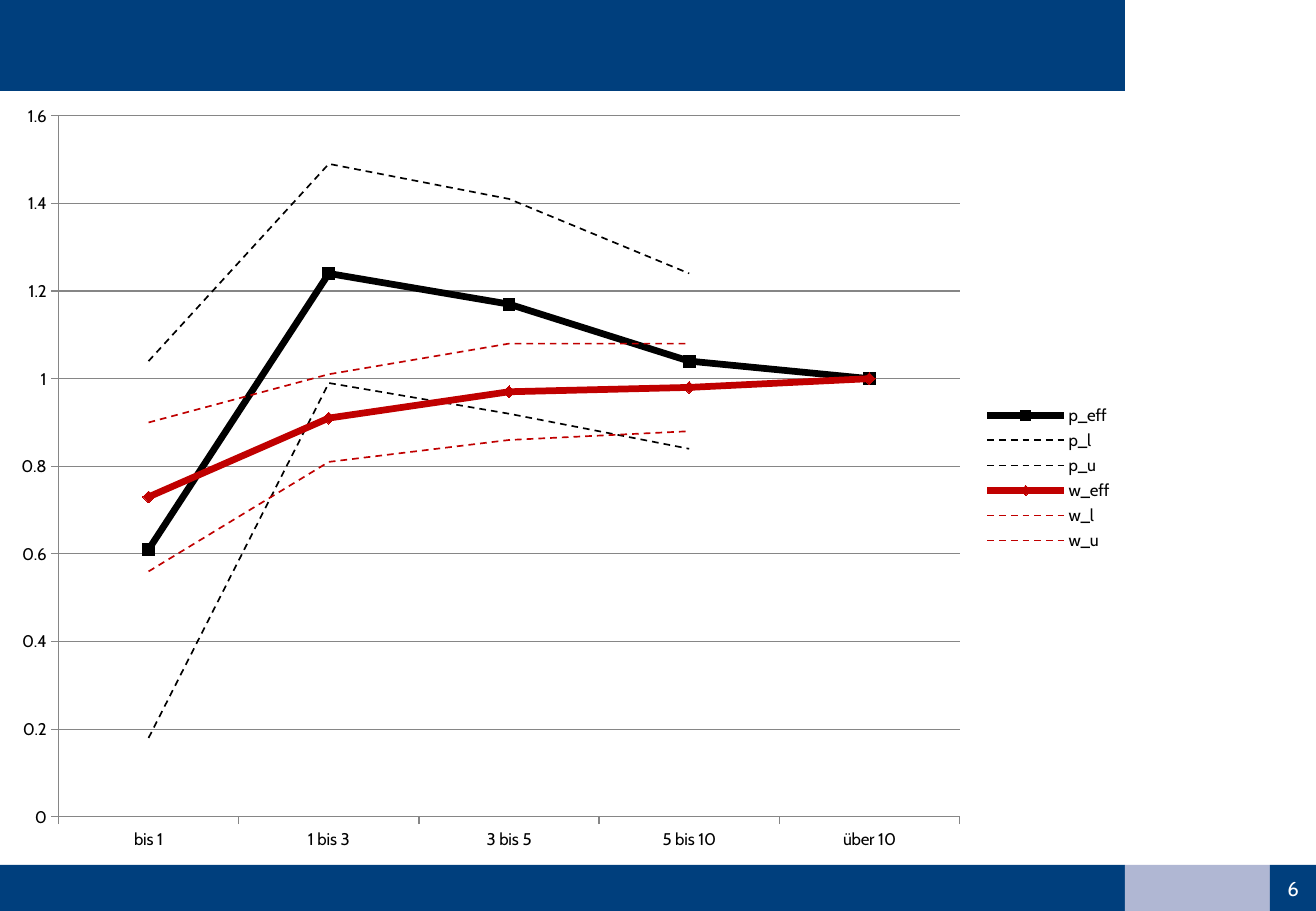
import pptx
import pptx.chart.data
import pptx.dml.color
import pptx.enum.chart
import pptx.enum.dml
import pptx.enum.shapes
import pptx.enum.text
import pptx.oxml
import pptx.oxml.ns
import pptx.util

PX = 7526  # EMU per px
NAVY, LILAC, WHITE = "003F7D", "B0B7D3", "FFFFFF"
BLACK, RED, GRAY = "000000", "C00000", "868686"

CATEGORIES = ["bis 1", "1 bis 3", "3 bis 5", "5 bis 10", "über 10"]
# Name, colour, values; effects are thick, confidence bounds dashed
SERIES = [
    ("p_eff", BLACK, [0.61, 1.24, 1.17, 1.04, 1]),
    ("p_l", BLACK, [0.18, 0.99, 0.92, 0.84, None]),
    ("p_u", BLACK, [1.04, 1.49, 1.41, 1.24, None]),
    ("w_eff", RED, [0.73, 0.91, 0.97, 0.98, 1]),
    ("w_l", RED, [0.56, 0.81, 0.86, 0.88, None]),
    ("w_u", RED, [0.9, 1.01, 1.08, 1.08, None]),
]


def rgb(value):
    return pptx.dml.color.RGBColor.from_string(value)


class Deck:
    font = "Cabin"

    def __init__(self, width, height):
        self.prs = pptx.Presentation()
        self.prs.slide_width, self.prs.slide_height = width * PX, height * PX
        self.slide = self.prs.slides.add_slide(self.prs.slide_layouts[6])

    def bar(self, x, y, w, h, fill):
        sp = self.slide.shapes.add_shape(
            pptx.enum.shapes.MSO_SHAPE.RECTANGLE, x * PX, y * PX, w * PX, h * PX)
        sp.shadow.inherit = False
        sp.fill.solid()
        sp.fill.fore_color.rgb = rgb(fill)
        sp.line.fill.background()
        return sp

    def number(self, sp, text, inset):
        tf = sp.text_frame
        tf.margin_left, tf.margin_right = 0, inset * PX
        tf.vertical_anchor = pptx.enum.text.MSO_ANCHOR.MIDDLE
        p = tf.paragraphs[0]
        p.text = text
        p.alignment = pptx.enum.text.PP_ALIGN.RIGHT
        p.font.name, p.font.size = self.font, pptx.util.Pt(12)
        p.font.color.rgb = rgb(WHITE)

    def line_chart(self, x, y, w, h, plot):
        data = pptx.chart.data.CategoryChartData()
        data.categories = CATEGORIES
        for name, _, values in SERIES:
            data.add_series(name, values)
        chart = self.slide.shapes.add_chart(
            pptx.enum.chart.XL_CHART_TYPE.LINE_MARKERS,
            x * PX, y * PX, w * PX, h * PX, data).chart
        chart.has_title = False
        chart.font.name, chart.font.size = self.font, pptx.util.Pt(10)
        chart.font.color.rgb = rgb(BLACK)
        chart.plots[0].vary_by_categories = False
        chart.has_legend = True
        chart.legend.position = pptx.enum.chart.XL_LEGEND_POSITION.RIGHT
        chart.legend.include_in_layout = False
        self.style_axes(chart)
        for series, (name, color, _) in zip(chart.plots[0].series, SERIES):
            self.style_series(series, name, color)
        left, top, width, height = plot
        self.place_plot(chart, {"x": (left - x) / w, "y": (top - y) / h,
                                "w": width / w, "h": height / h})

    def style_axes(self, chart):
        axis = chart.value_axis
        axis.minimum_scale, axis.maximum_scale, axis.major_unit = 0, 1.6, 0.2
        axis.has_major_gridlines = True
        lines = [axis.major_gridlines.format.line]
        for ax in (chart.category_axis, axis):
            ax.major_tick_mark = pptx.enum.chart.XL_TICK_MARK.OUTSIDE
            lines.append(ax.format.line)
        for line in lines:
            line.color.rgb = rgb(GRAY)
            line.width = pptx.util.Pt(0.75)

    def style_series(self, series, name, color):
        styles = pptx.enum.chart.XL_MARKER_STYLE
        series.smooth = False
        line, marker = series.format.line, series.marker
        line.color.rgb = rgb(color)
        if name.endswith("_eff"):
            line.width = pptx.util.Pt(4)
            marker.style = styles.SQUARE if color == BLACK else styles.DIAMOND
            marker.size = 7
            marker.format.fill.solid()
            marker.format.fill.fore_color.rgb = rgb(color)
            marker.format.line.color.rgb = rgb(color)
        else:
            line.width = pptx.util.Pt(1)
            line.dash_style = pptx.enum.dml.MSO_LINE.DASH
            marker.style = styles.NONE

    def place_plot(self, chart, fractions):
        area = chart.element.xpath("c:chart/c:plotArea")[0]
        for old in area.xpath("c:layout"):
            area.remove(old)
        sizes = "".join(f'<c:{k} val="{v:.3f}"/>' for k, v in fractions.items())
        area.insert(0, pptx.oxml.parse_xml(
            f'<c:layout {pptx.oxml.ns.nsdecls("c")}><c:manualLayout>'
            '<c:layoutTarget val="inner"/><c:xMode val="edge"/>'
            f'<c:yMode val="edge"/>{sizes}</c:manualLayout></c:layout>'))


def main():
    deck = Deck(1316, 911)

    # Header and footer bars
    deck.bar(0, 0, 1125, 91, NAVY)
    deck.bar(0, 865, 1125, 46, NAVY)
    deck.bar(1125, 865, 145, 46, LILAC)

    # Slide number
    deck.number(deck.bar(1270, 865, 46, 46, NAVY), "6", 17)

    # Effects with their bounds
    deck.line_chart(0, 91, 1125, 774, plot=(59, 116, 901, 701))

    deck.prs.save("out.pptx")


if __name__ == "__main__":
    main()
